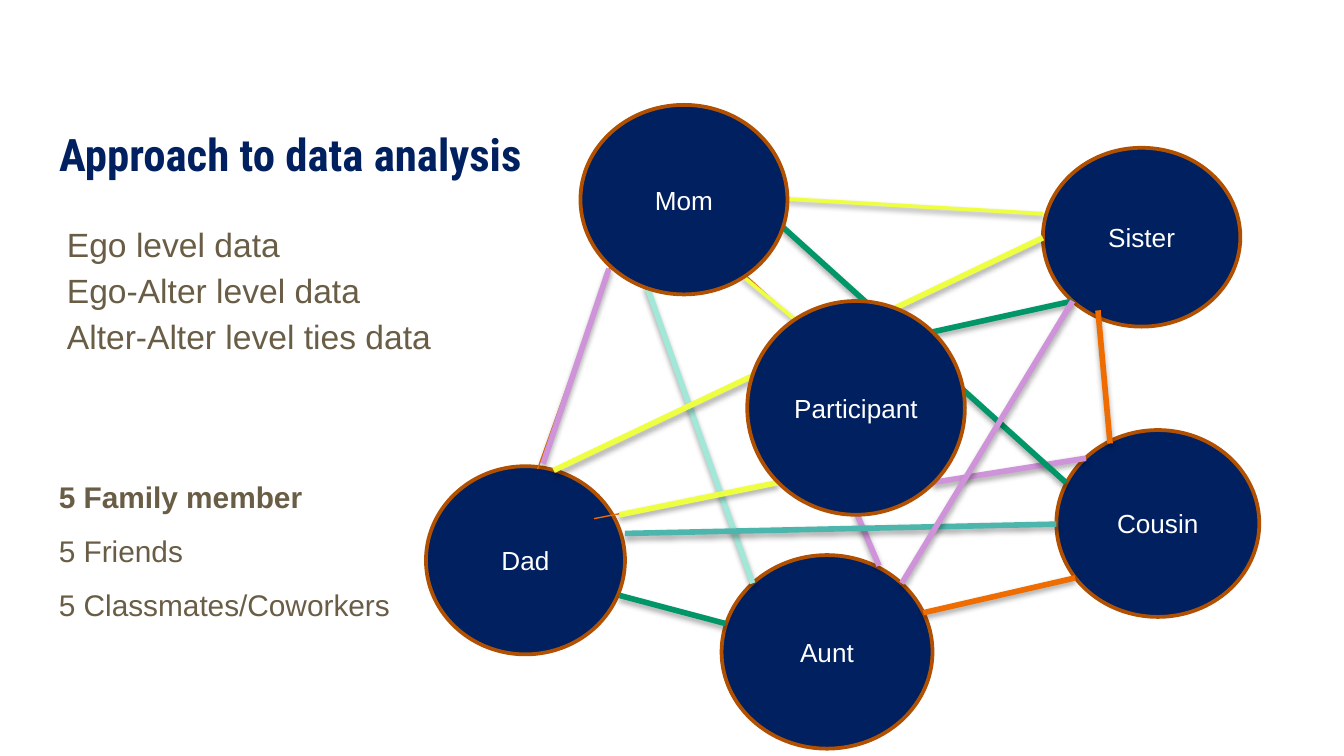
from typing import NamedTuple

import pptx
import pptx.dml.color
import pptx.enum.shapes
import pptx.enum.text
import pptx.oxml
import pptx.util

Pt = pptx.util.Pt
ANCHOR = pptx.enum.text.MSO_ANCHOR
ALIGN = pptx.enum.text.PP_ALIGN
NAMESPACE = 'xmlns:a="http://schemas.openxmlformats.org/drawingml/2006/main"'

NAVY, RUST, BROWN, WHITE = "002060", "B15000", "695D46", "FFFFFF"
YELLOW, GREEN, LILAC, MINT = "EEFF41", "009668", "CE93D8", "A1E8D9"
TEAL, ORANGE, DARK_ORANGE = "4DB6AC", "EF6C00", "EA6A00"


class Person(NamedTuple):
    name: str
    left: float
    top: float
    width: float
    height: float


class Tie(NamedTuple):
    start: tuple[float, float]
    end: tuple[float, float]
    color: str
    weight: float = 3


OUTER_PEOPLE = [
    Person("Dad", 228.2, 249.8, 106.6, 100.8),
    Person("Sister", 558.7, 79.2, 105.8, 95.8),
    Person("Cousin", 565.9, 230.4, 108.7, 100.1),
    Person("Aunt", 386.6, 297.4, 113, 103.7),
]
FRONT_PEOPLE = [
    Person("Mom", 311, 56.2, 110.9, 101.5),
    Person("Participant", 400.3, 161.3, 116.6, 114.5),
]
BACK_TIES = [
    Tie((440.6, 185), (392.4, 141.1), DARK_ORANGE, 0.75),
    Tie((574.6, 161.3), (499.7, 177.8), DARK_ORANGE, 0.75),
    Tie((416.9, 258.5), (318.2, 277.9), DARK_ORANGE, 0.75),
    Tie((499.7, 258.5), (581.8, 245.5), DARK_ORANGE, 0.75),
    Tie((458.6, 274.3), (470.9, 303.1), LILAC),
    Tie((326.9, 142.6), (288, 251.3), DARK_ORANGE, 0.75),
    Tie((576, 309.6), (494.6, 328.3), ORANGE),
    Tie((421.9, 106.6), (558.7, 114.5), YELLOW, 2),
    Tie((397.4, 147.6), (426.2, 171.4), YELLOW, 2),
    Tie((331.9, 319), (388.8, 334.1), GREEN),
    Tie((326.2, 144), (290.9, 248.4), LILAC),
    Tie((346.3, 152.6), (403.2, 312.5), MINT),
    Tie((334.8, 285.8), (565.9, 280.8), TEAL),
    Tie((588.2, 166.3), (594.7, 237.6), ORANGE),
    Tie((558.7, 127.4), (296.6, 252), YELLOW),
    Tie((574.6, 161.3), (499.7, 177.8), GREEN),
    Tie((416.9, 258.5), (331.9, 275.8), YELLOW),
    Tie((581.8, 245.5), (499.7, 258.5), LILAC),
    Tie((416.2, 118.8), (571, 258.5), GREEN),
]
FRONT_TIE = Tie((574.6, 161.3), (483.1, 312.5), LILAC)


def rgb(color: str) -> pptx.dml.color.RGBColor:
    return pptx.dml.color.RGBColor.from_string(color)


def write(frame, text: str, *, size: float, color: str, font: str = "Arial",
          bold_lines: int = 0, align=ALIGN.LEFT, anchor=ANCHOR.TOP,
          inset: float | None = None, indent: float = 0,
          line_spacing: float = 1.0) -> None:
    """Fill a text frame, one paragraph per line; the first bold_lines are bold."""
    frame.word_wrap = True
    frame.vertical_anchor = anchor
    if inset is not None:
        frame.margin_left = frame.margin_right = Pt(inset)
        frame.margin_top = frame.margin_bottom = Pt(inset)
    frame.text = text
    for index, paragraph in enumerate(frame.paragraphs):
        paragraph.alignment = align
        paragraph.line_spacing = line_spacing
        if indent:
            paragraph_format = paragraph._p.get_or_add_pPr()
            paragraph_format.set("marL", str(Pt(indent)))
            paragraph_format.set("indent", "0")
        paragraph.font.name = font
        paragraph.font.size = Pt(size)
        paragraph.font.bold = index < bold_lines
        paragraph.font.color.rgb = rgb(color)


def add_person(slide, person: Person) -> None:
    shape = slide.shapes.add_shape(
        pptx.enum.shapes.MSO_SHAPE.FLOWCHART_CONNECTOR,
        Pt(person.left), Pt(person.top), Pt(person.width), Pt(person.height))
    shape.shadow.inherit = False
    shape.fill.solid()
    shape.fill.fore_color.rgb = rgb(NAVY)
    shape.line.color.rgb = rgb(RUST)
    shape.line.width = Pt(2)
    write(shape.text_frame, person.name, size=14, color=WHITE,
          align=ALIGN.CENTER, anchor=ANCHOR.MIDDLE)


def add_tie(slide, tie: Tie) -> None:
    """Draw a tie; only the heavy ones cast a shadow."""
    line = slide.shapes.add_connector(
        pptx.enum.shapes.MSO_CONNECTOR.STRAIGHT,
        *(Pt(value) for value in tie.start + tie.end))
    line.line.color.rgb = rgb(tie.color)
    line.line.width = Pt(tie.weight)
    shadow = ""
    if tie.weight > 1:
        shadow = (f'<a:outerShdw blurRad="{Pt(3.1)}" dist="{Pt(1.8)}" dir="5400000" '
                  'rotWithShape="0"><a:srgbClr val="000000"><a:alpha val="35000"/>'
                  '</a:srgbClr></a:outerShdw>')
    line._element.spPr.append(pptx.oxml.parse_xml(
        f"<a:effectLst {NAMESPACE}>{shadow}</a:effectLst>"))


def add_text(slide, left: float, top: float, width: float, height: float,
             text: str, **text_format) -> None:
    box = slide.shapes.add_textbox(Pt(left), Pt(top), Pt(width), Pt(height))
    write(box.text_frame, text, color=BROWN, **text_format)


def main() -> None:
    presentation = pptx.Presentation()
    presentation.slide_width, presentation.slide_height = Pt(720), Pt(405)
    slide = presentation.slides.add_slide(presentation.slide_layouts[5])

    title = slide.shapes.title
    title.left, title.top, title.width, title.height = Pt(24.5), Pt(43.9), Pt(329.8), Pt(59.8)
    write(title.text_frame, "Approach to data analysis", size=24, color=NAVY,
          font="Roboto Condensed", bold_lines=1, anchor=ANCHOR.BOTTOM, inset=7.2)
    add_text(slide, 16.6, 109.4, 249.8, 250.6,
             "Ego level data\nEgo-Alter level data\nAlter-Alter level ties data",
             size=18, inset=7.2, indent=12.2, line_spacing=1.15)
    add_text(slide, 24.5, 243.4, 206.6, 90.7,
             "5 Family member\n5 Friends\n5 Classmates/Coworkers",
             size=16, bold_lines=1, line_spacing=1.5)

    for person in OUTER_PEOPLE:
        add_person(slide, person)
    for tie in BACK_TIES:
        add_tie(slide, tie)
    for person in FRONT_PEOPLE:
        add_person(slide, person)
    add_tie(slide, FRONT_TIE)

    presentation.save("out.pptx")


if __name__ == "__main__":
    main()
